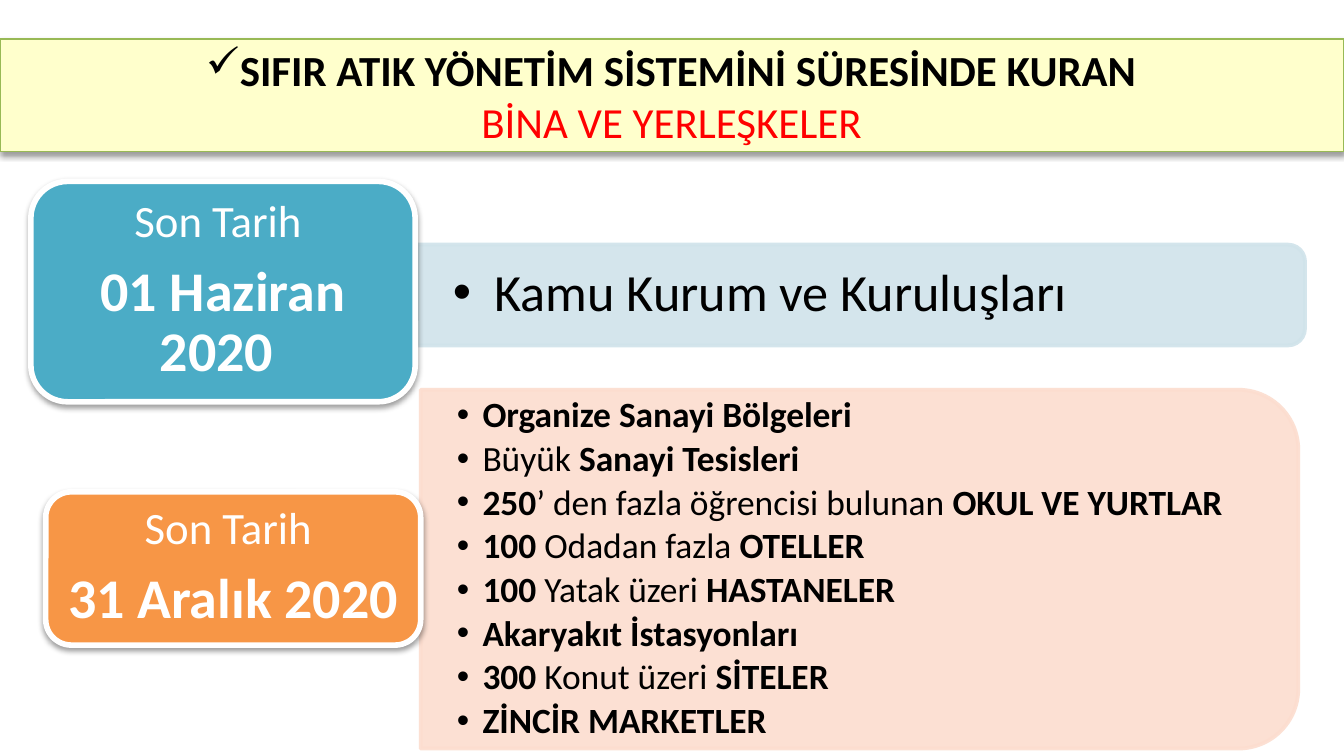
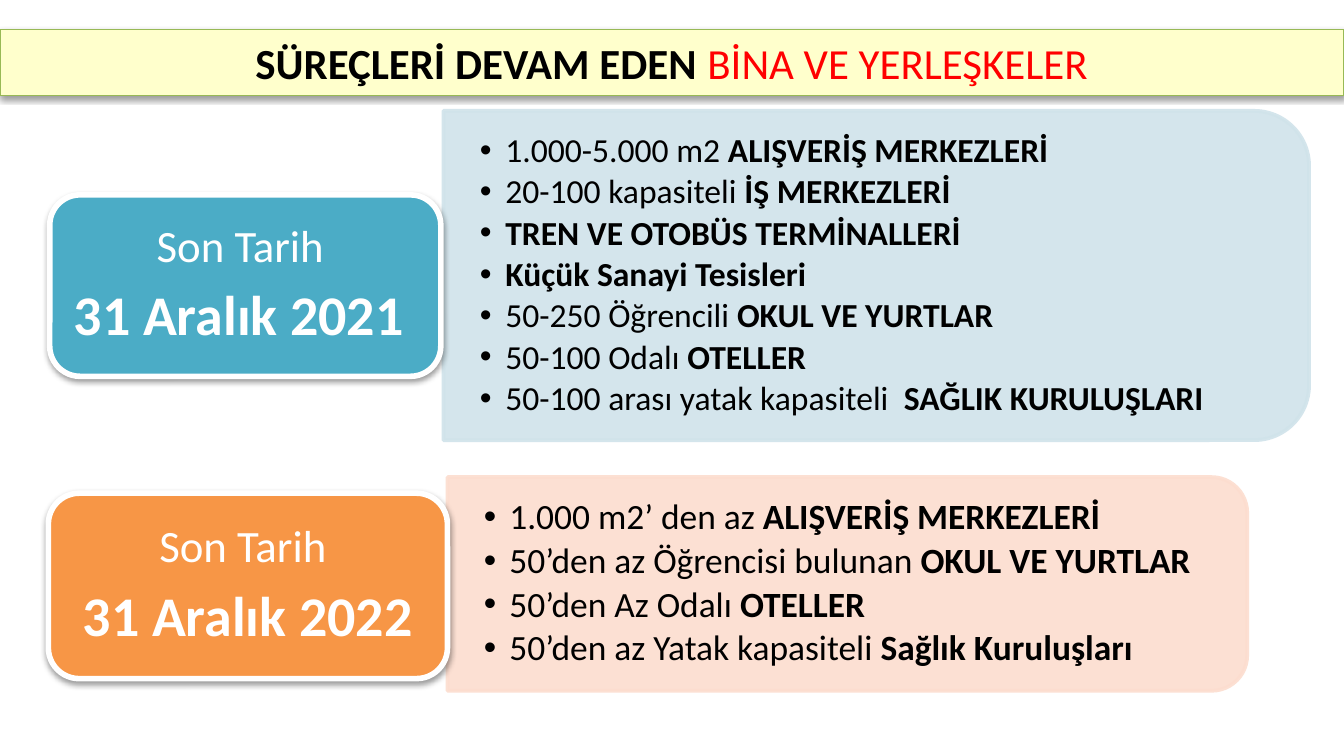
from dataclasses import dataclass

from lxml.etree import SubElement
from pptx import Presentation
from pptx.dml.color import RGBColor
from pptx.enum.shapes import MSO_SHAPE
from pptx.enum.text import MSO_ANCHOR, MSO_AUTO_SIZE, PP_ALIGN
from pptx.oxml.ns import qn
from pptx.util import Inches, Pt

WIDTH, HEIGHT = 10, 5.625
COLUMN, ROW = WIDTH / 100, HEIGHT / 100
FONT = "Calibri"
CORNER_INSET = 0.0488
TWO_CONTENT = 3
COLORS = {
    "black": "000000",
    "white": "FFFFFF",
    "red": "FF0000",
    "band": "FFFFCC",
    "band_line": "98B955",
    "teal": "4BACC6",
    "orange": "F79646",
    "pale_teal": "D0E3EA",
    "pale_orange": "FCDDCF",
}


@dataclass(frozen=True)
class Box:
    column: float
    row: float
    columns: float
    rows: float

    def inches(self) -> tuple[float, float, float, float]:
        return self.column * COLUMN, self.row * ROW, self.columns * COLUMN, self.rows * ROW


@dataclass(frozen=True)
class Deadline:
    date: str
    color: str
    card: Box
    panel: Box
    items: list[str]
    size: int
    indent: float = 0.19


@dataclass(frozen=True)
class DeadlineSlide:
    title: list[str]
    title_box: Box
    deadlines: list[Deadline]
    title_bullet: str = ""


def place(shape, left: float, top: float, width: float, height: float) -> None:
    shape.left, shape.top = Inches(left), Inches(top)
    shape.width, shape.height = Inches(width), Inches(height)


def set_alpha(color_parent, percent: int) -> None:
    for color in color_parent.iter(qn("a:srgbClr")):
        SubElement(color, qn("a:alpha"), val=str(percent * 1000))


def paint(shape, fill: str, line: str, line_width: float) -> None:
    shape.fill.solid()
    shape.fill.fore_color.rgb = RGBColor.from_string(COLORS[fill])
    shape.line.color.rgb = RGBColor.from_string(COLORS[line])
    shape.line.width = Pt(line_width)
    shape.shadow.inherit = False


def cast_shadow(shape) -> None:
    effects = shape.element.spPr.find(qn("a:effectLst"))
    shadow = SubElement(effects, qn("a:outerShdw"), blurRad="40000", dist="20000",
                        dir="5400000", rotWithShape="0")
    SubElement(shadow, qn("a:srgbClr"), val=COLORS["black"])
    set_alpha(shadow, 38)


def prepare_frame(shape, side: float = 0.1, edge: float = 0.05):
    frame = shape.text_frame
    frame.word_wrap = True
    frame.auto_size = MSO_AUTO_SIZE.NONE
    frame.vertical_anchor = MSO_ANCHOR.MIDDLE
    frame.margin_left = frame.margin_right = Inches(side)
    frame.margin_top = frame.margin_bottom = Inches(edge)
    return frame


def write(frame, text: str, *, size: int, color: str = "black", bold_color: str = "",
          align=PP_ALIGN.CENTER, spacing: float = 1.0, after: int = 0,
          bullet: str = "", indent: float = 0, level: int = 0) -> None:
    first = frame.paragraphs[0]
    paragraph = frame.add_paragraph() if first.runs else first
    paragraph.alignment = align
    paragraph.level = level
    paragraph.line_spacing = spacing
    paragraph.space_before = Pt(0)
    properties = paragraph._p.get_or_add_pPr()
    properties.set("marL", str(Inches(indent)))
    properties.set("indent", str(-Inches(indent)))
    space_after = SubElement(properties, qn("a:spcAft"))
    SubElement(space_after, qn("a:spcPct"), val=str(after * 1000))
    if bullet:
        SubElement(properties, qn("a:buChar"), char=bullet)
    for index, part in enumerate(text.split("*")):
        if not part:
            continue
        bold = index % 2 == 1
        run = paragraph.add_run()
        run.text = part
        run.font.name = FONT
        run.font.size = Pt(size)
        run.font.bold = bold
        chosen = bold_color if bold and bold_color else color
        run.font.color.rgb = RGBColor.from_string(COLORS[chosen])


def draw_title(slide, content: DeadlineSlide) -> None:
    title = slide.shapes.title
    place(title, *content.title_box.inches())
    paint(title, "band", "band_line", 0.75)
    cast_shadow(title)
    frame = prepare_frame(title)
    for number, line in enumerate(content.title):
        write(frame, line, size=23, color="red", bold_color="black",
              bullet="" if number else content.title_bullet)


def draw_panel(slide, deadline: Deadline, body) -> None:
    left, top, width, height = deadline.panel.inches()
    panel = slide.shapes.add_shape(MSO_SHAPE.ROUND_2_SAME_RECTANGLE, 0, 0, 0, 0)
    place(panel, left + (width - height) / 2, top + (height - width) / 2, height, width)
    panel.rotation = 90
    pale = f"pale_{deadline.color}"
    paint(panel, pale, pale, 2)
    set_alpha(panel.element.spPr, 90)

    inset = height * CORNER_INSET
    place(body, left, top + inset, width - inset, height - 2 * inset)
    slide.shapes._spTree.append(body.element)
    frame = prepare_frame(body, 0.27, 0.14)
    for item in deadline.items:
        write(frame, item, size=deadline.size, align=PP_ALIGN.LEFT, spacing=0.9,
              after=15, bullet="•", indent=deadline.indent, level=1)


def draw_card(slide, deadline: Deadline) -> None:
    card = slide.shapes.add_shape(MSO_SHAPE.ROUNDED_RECTANGLE, 0, 0, 0, 0)
    place(card, *deadline.card.inches())
    paint(card, deadline.color, "white", 3)
    cast_shadow(card)
    frame = prepare_frame(card)
    for text, size in (("Son Tarih ", 24), (f"*{deadline.date}*", 30)):
        write(frame, text, size=size, color="white", spacing=0.9, after=35)


SLIDES = [
    DeadlineSlide(
        ["*SIFIR ATIK YÖNETİM SİSTEMİNİ SÜRESİNDE KURAN*", "BİNA VE YERLEŞKELER"],
        Box(0, 5.16, 100, 14.93),
        [
            Deadline("01 Haziran 2020 ", "teal", Box(2.3, 24, 28.6, 29.16),
                     Box(31, 32.36, 66.1, 13.33),
                     ["Kamu Kurum ve Kuruluşları"], 28, 0.31),
            Deadline("31 Aralık 2020 ", "orange", Box(3.4, 65.07, 27.9, 20.27),
                     Box(31.3, 51.56, 65.3, 47.47), [
                         "*Organize Sanayi Bölgeleri*",
                         "Büyük *Sanayi Tesisleri*",
                         "*250*’ den fazla öğrencisi bulunan *OKUL VE YURTLAR*",
                         "*100* Odadan fazla *OTELLER*",
                         "*100* Yatak üzeri *HASTANELER*",
                         "*Akaryakıt İstasyonları*",
                         "*300* Konut üzeri *SİTELER*",
                         "*ZİNCİR MARKETLER*",
                     ], 19),
        ],
        title_bullet="✓",
    ),
    DeadlineSlide(
        ["*SÜREÇLERİ DEVAM EDEN *BİNA VE YERLEŞKELER"],
        Box(0, 3.91, 100, 8.71),
        [
            Deadline("31 Aralık 2021 ", "teal", Box(3.7, 25.78, 29.1, 24),
                     Box(33, 14.67, 64.4, 43.56), [
                         "1.000-5.000 m2 *ALIŞVERİŞ MERKEZLERİ*",
                         "20-100 kapasiteli *İŞ MERKEZLERİ*",
                         "*TREN VE OTOBÜS TERMİNALLERİ*",
                         "*Küçük Sanayi Tesisleri*",
                         "50-250 Öğrencili *OKUL VE YURTLAR*",
                         "50-100 Odalı* OTELLER*",
                         "50-100 arası yatak kapasiteli  *SAĞLIK KURULUŞLARI*",
                     ], 18),
            Deadline("31 Aralık 2022", "orange", Box(3.6, 65.24, 29.7, 24.53),
                     Box(33.3, 63.11, 59.5, 28.27), [
                         "1.000 m2’ den az *ALIŞVERİŞ MERKEZLERİ*",
                         "50’den az Öğrencisi bulunan *OKUL VE YURTLAR*",
                         "50’den Az Odalı *OTELLER*",
                         "50’den az Yatak kapasiteli *Sağlık Kuruluşları*",
                     ], 19),
        ],
    ),
]


def main() -> None:
    presentation = Presentation()
    presentation.slide_width = Inches(WIDTH)
    presentation.slide_height = Inches(HEIGHT)
    for content in SLIDES:
        slide = presentation.slides.add_slide(presentation.slide_layouts[TWO_CONTENT])
        draw_title(slide, content)
        bodies = list(slide.placeholders)[1:]
        for deadline, body in zip(content.deadlines, bodies):
            draw_panel(slide, deadline, body)
            draw_card(slide, deadline)
    presentation.save("out.pptx")


if __name__ == "__main__":
    main()
